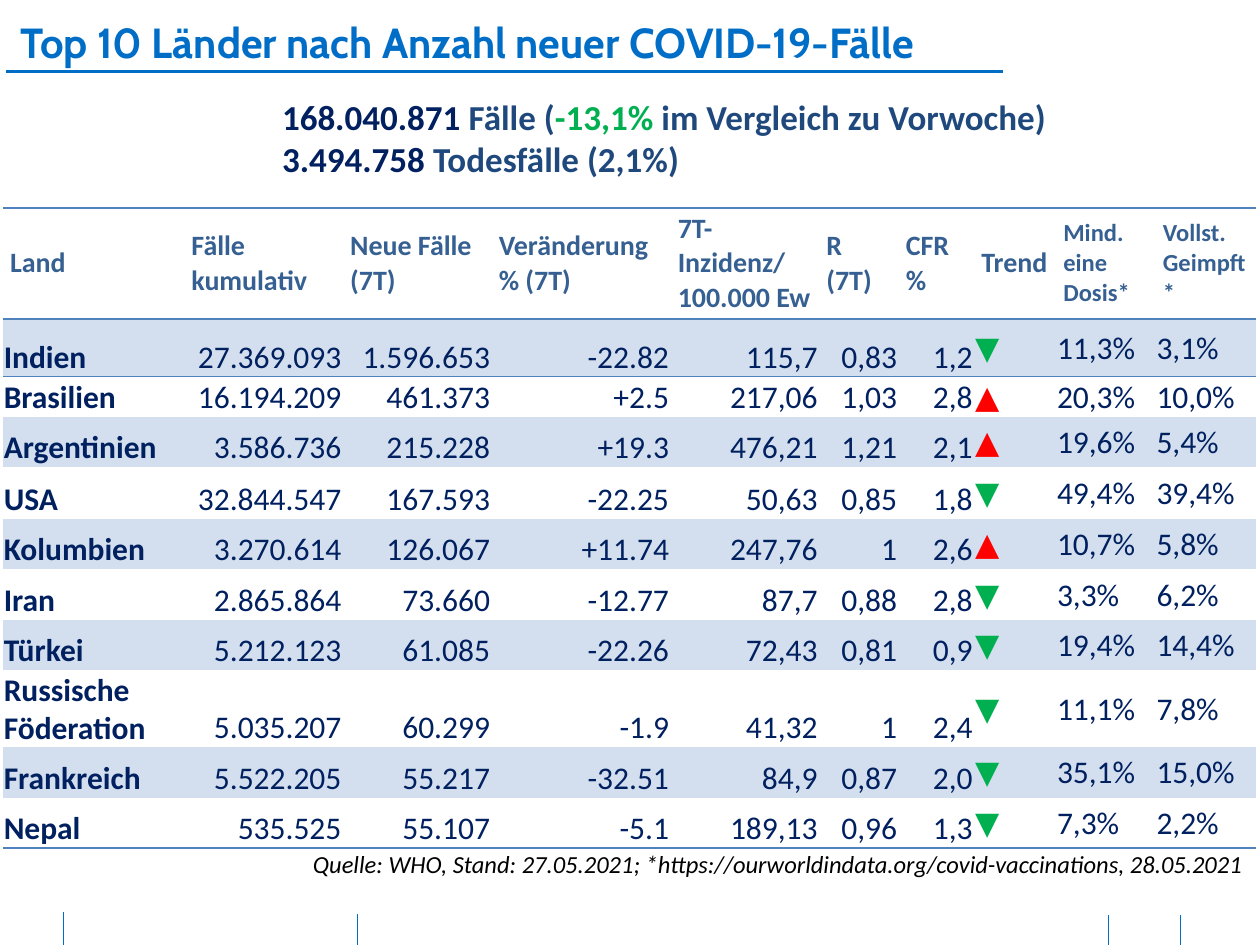
from dataclasses import dataclass
from typing import NamedTuple

from lxml.etree import SubElement
from pptx import Presentation
from pptx.dml.color import RGBColor
from pptx.enum.shapes import MSO_CONNECTOR
from pptx.enum.text import MSO_ANCHOR, MSO_AUTO_SIZE, PP_ALIGN
from pptx.oxml.ns import qn
from pptx.util import Emu, Pt

PX = 9144  # 100 px to the inch


@dataclass(frozen=True)
class Theme:
    heading_font: str = "Cabin"
    body_font: str = "Calibri"
    blue: str = "006EC7"
    slate: str = "1F497D"
    navy: str = "002060"
    header: str = "366092"
    rule: str = "4F81BD"
    band: str = "D3DFEE"
    green: str = "00B050"
    red: str = "FF0000"
    black: str = "000000"
    title_size: int = 24
    summary_size: int = 20
    cell_size: int = 18
    header_size: int = 16
    small_size: int = 14


THEME = Theme()


class Box(NamedTuple):
    x: int
    y: int
    w: int
    h: int


class Line(NamedTuple):
    x1: int
    y1: int
    x2: int
    y2: int
    width: float


class Style(NamedTuple):
    size: int
    color: str
    bold: bool = False
    italic: bool = False
    font: str = THEME.body_font


class Span(NamedTuple):
    text: str
    style: Style


class Country(NamedTuple):
    name: str
    total: str
    new: str
    change: str
    incidence: str
    r: str
    cfr: str
    trend: str
    one_dose: str
    full: str


FOOTER_TICKS = [Line(284, 725, 284, 750, 0.5), Line(50, 724, 50, 750, 0.5),
                Line(937, 726, 937, 750, 0.5), Line(880, 726, 880, 750, 0.5)]
TITLE_RULE = Line(5, 57, 796, 57, 1.5)

COLUMN_WIDTHS = [144, 126, 118, 142, 118, 63, 60, 65, 79, 80]
ROW_HEIGHTS = [88, 46, 32, 40, 41, 40, 40, 40, 39, 40, 40]
TABLE_BOX = Box(2, 165, sum(COLUMN_WIDTHS), sum(ROW_HEIGHTS))
TREND_COLUMN = 7  # columns before it are right-aligned figures
UP, DOWN = "▲", "▼"

HEADERS = ["Land", "Fälle kumulativ", "Neue Fälle (7T)", "Veränderung % (7T)",
           "7T-Inzidenz/ 100.000 Ew", "R (7T)", "CFR %", "Trend",
           "Mind. eine Dosis*", "Vollst. Geimpft*"]
COUNTRIES = [
    Country("Indien", "27.369.093", "1.596.653", "-22.82", "115,7", "0,83", "1,2", DOWN, "11,3%", "3,1%"),
    Country("Brasilien", "16.194.209", "461.373", "+2.5", "217,06", "1,03", "2,8", UP, "20,3%", "10,0%"),
    Country("Argentinien", "3.586.736", "215.228", "+19.3", "476,21", "1,21", "2,1", UP, "19,6%", "5,4%"),
    Country("USA", "32.844.547", "167.593", "-22.25", "50,63", "0,85", "1,8", DOWN, "49,4%", "39,4%"),
    Country("Kolumbien", "3.270.614", "126.067", "+11.74", "247,76", "1", "2,6", UP, "10,7%", "5,8%"),
    Country("Iran", "2.865.864", "73.660", "-12.77", "87,7", "0,88", "2,8", DOWN, "3,3%", "6,2%"),
    Country("Türkei", "5.212.123", "61.085", "-22.26", "72,43", "0,81", "0,9", DOWN, "19,4%", "14,4%"),
    Country("Russische Föderation", "5.035.207", "60.299", "-1.9", "41,32", "1", "2,4", DOWN, "11,1%", "7,8%"),
    Country("Frankreich", "5.522.205", "55.217", "-32.51", "84,9", "0,87", "2,0", DOWN, "35,1%", "15,0%"),
    Country("Nepal", "535.525", "55.107", "-5.1", "189,13", "0,96", "1,3", DOWN, "7,3%", "2,2%"),
]


def px(n: int) -> Emu:
    return Emu(n * PX)


def format_run(r, style: Style) -> None:
    r.font.name = style.font
    r.font.size = Pt(style.size)
    r.font.bold = style.bold
    r.font.italic = style.italic
    r.font.color.rgb = RGBColor.from_string(style.color)


def set_margins(item, left: int, top: int, right: int, bottom: int) -> None:
    item.margin_left, item.margin_top = px(left), px(top)
    item.margin_right, item.margin_bottom = px(right), px(bottom)


def draw_line(s, line: Line) -> None:
    c = s.shapes.add_connector(MSO_CONNECTOR.STRAIGHT, *map(px, line[:4]))
    c.line.color.rgb = RGBColor.from_string(THEME.blue)
    c.line.width = Pt(line.width)
    SubElement(c._element.spPr, qn("a:effectLst"))


def draw_text(s, box: Box, paragraphs: list[list[Span]],
              align: PP_ALIGN = PP_ALIGN.LEFT):
    tf = s.shapes.add_textbox(*map(px, box)).text_frame
    tf.word_wrap = True
    tf.auto_size = MSO_AUTO_SIZE.SHAPE_TO_FIT_TEXT
    for i, spans in enumerate(paragraphs):
        p = tf.add_paragraph() if i else tf.paragraphs[0]
        p.alignment = align
        for span in spans:
            r = p.add_run()
            r.text = span.text
            format_run(r, span.style)
    return tf


def add_border(cell, side: str) -> None:
    ln = SubElement(cell._tc.get_or_add_tcPr(), qn(f"a:{side}"), w=str(Pt(1)))
    fill = SubElement(ln, qn("a:solidFill"))
    SubElement(fill, qn("a:srgbClr"), val=THEME.rule)


def cell_style(row: int, col: int, text: str) -> Style:
    if row == 0:
        size = THEME.small_size if col > TREND_COLUMN else THEME.header_size
        return Style(size, THEME.header, bold=True)
    color = {UP: THEME.red, DOWN: THEME.green}.get(text, THEME.navy)
    return Style(THEME.cell_size, color, bold=col == 0)


def fill_cell(cell, row: int, col: int, text: str) -> None:
    is_header = row == 0
    set_margins(cell, *((6, 0, 6, 0) if is_header else (1, 1, 1, 0)))
    centred = is_header or col >= TREND_COLUMN
    cell.vertical_anchor = MSO_ANCHOR.MIDDLE if centred else MSO_ANCHOR.BOTTOM
    # Borders come before the fill in the cell properties
    if row in (0, 1):
        add_border(cell, "lnT")
    if row in (0, len(COUNTRIES)):
        add_border(cell, "lnB")
    if row % 2:
        cell.fill.solid()
        cell.fill.fore_color.rgb = RGBColor.from_string(THEME.band)
    else:
        cell.fill.background()
    cell.text_frame.text = text
    p = cell.text_frame.paragraphs[0]
    if not is_header and 0 < col < TREND_COLUMN:
        p.alignment = PP_ALIGN.RIGHT
    format_run(p.runs[0], cell_style(row, col, text))


def draw_table(s) -> None:
    rows = [HEADERS, *COUNTRIES]
    table = s.shapes.add_table(len(rows), len(HEADERS), *map(px, TABLE_BOX)).table
    table.first_row = table.horz_banding = False
    # "No Style, No Grid"
    table._tbl.tblPr.find(qn("a:tableStyleId")).text = "{2D5ABB26-0587-4C30-8999-92F81FD0307C}"
    for column, width in zip(table.columns, COLUMN_WIDTHS):
        column.width = px(width)
    for i, (values, height) in enumerate(zip(rows, ROW_HEIGHTS)):
        table.rows[i].height = px(height)
        for j, text in enumerate(values):
            fill_cell(table.cell(i, j), i, j, text)


def main() -> None:
    prs = Presentation()
    prs.slide_width, prs.slide_height = px(1000), px(750)
    s = prs.slides.add_slide(prs.slide_layouts[6])

    # Footer ticks
    for tick in FOOTER_TICKS:
        draw_line(s, tick)

    # Title and its rule
    title = Style(THEME.title_size, THEME.blue, bold=True, font=THEME.heading_font)
    tf = draw_text(s, Box(16, 13, 885, 40),
                   [[Span("Top 10 Länder nach Anzahl neuer COVID-19-Fälle", title)]])
    set_margins(tf, 0, 0, 0, 0)
    draw_line(s, TITLE_RULE)

    # Worldwide summary
    figure, label, drop = (Style(THEME.summary_size, color, bold=True)
                           for color in (THEME.navy, THEME.slate, THEME.green))
    draw_text(s, Box(214, 71, 672, 77), [
        [Span("168.040.871 ", figure), Span("Fälle (", label),
         Span("-13,1% ", drop), Span("im Vergleich zu Vorwoche)", label)],
        [Span("3.494.758 ", figure), Span("Todesfälle (2,1%)", label)],
    ])

    # Source line
    source = Style(THEME.small_size, THEME.black, italic=True)
    draw_text(s, Box(209, 669, 792, 34), [[Span(
        "Quelle: WHO, Stand: 27.05.2021; "
        "*https://ourworldindata.org/covid-vaccinations, 28.05.2021 ", source)]],
        PP_ALIGN.RIGHT)

    # Country table
    draw_table(s)
    prs.save("out.pptx")


if __name__ == "__main__":
    main()
